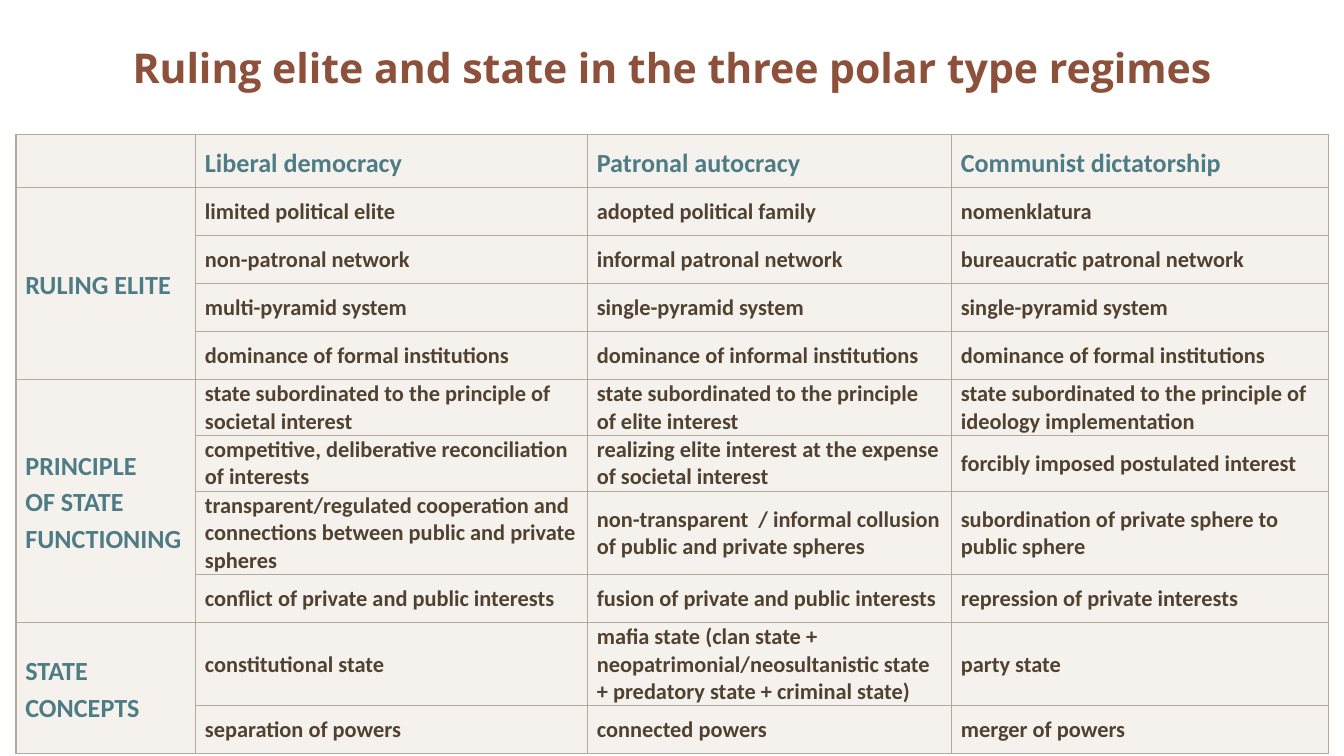
from lxml import etree
from pptx import Presentation
from pptx.dml.color import RGBColor
from pptx.enum.text import MSO_ANCHOR, PP_ALIGN
from pptx.oxml.ns import qn
from pptx.util import Pt

MIDDLE = MSO_ANCHOR.MIDDLE
CENTER = PP_ALIGN.CENTER
BORDER = "B3A99D"
FILL = "EFEAE4"
TITLE = {"name": "Open Sans", "size": Pt(22), "bold": True, "color": "8D503B"}
HEADING = {"name": "Calibri", "size": Pt(14), "bold": True, "color": "4D7C85"}
BODY = {"name": "Calibri", "size": Pt(12), "bold": True, "color": "504131"}


def format_font(font, values):
    for name, value in values.items():
        if name == "color":
            font.color.rgb = RGBColor.from_string(value)
        else:
            setattr(font, name, value)


def add_border(cell, side, width):
    line = etree.SubElement(cell._tc.get_or_add_tcPr(), qn(f"a:ln{side}"), w=str(Pt(width)))
    fill = etree.SubElement(line, qn("a:solidFill"))
    etree.SubElement(fill, qn("a:srgbClr"), val=BORDER)


presentation = Presentation()
presentation.slide_width = Pt(720)
presentation.slide_height = Pt(405)
slide = presentation.slides.add_slide(presentation.slide_layouts[5])

# Title
title = slide.shapes.title
title.left, title.top, title.width, title.height = Pt(8.6), Pt(0), Pt(703), Pt(72)
title.text_frame.text = "Ruling elite and state in the three polar type regimes"
title.text_frame.word_wrap = True
title.text_frame.vertical_anchor = MIDDLE
title_paragraph = title.text_frame.paragraphs[0]
title_paragraph.alignment = CENTER
format_font(title_paragraph.font, TITLE)

# Table contents: row height, row label, one text per regime
rows = [
    (28.4, "", "Liberal democracy", "Patronal autocracy", "Communist dictatorship"),
    (25.7, "RULING ELITE", "limited political elite", "adopted political family", "nomenklatura"),
    (25.7, "", "non-patronal network", "informal patronal network", "bureaucratic patronal network"),
    (25.7, "", "multi-pyramid system", "single-pyramid system", "single-pyramid system"),
    (25.7, "", "dominance of formal institutions", "dominance of informal institutions",
     "dominance of formal institutions"),
    (29.6, "PRINCIPLE\nOF STATE FUNCTIONING",
     "state subordinated to the principle of societal interest",
     "state subordinated to the principle of elite interest",
     "state subordinated to the principle of ideology implementation"),
    (29.6, "", "competitive, deliberative reconciliation of interests",
     "realizing elite interest at the expense of societal interest",
     "forcibly imposed postulated interest"),
    (44.4, "", "transparent/regulated cooperation and connections between public and private spheres",
     "non-transparent  / informal collusion of public and private spheres",
     "subordination of private sphere to public sphere"),
    (25.7, "", "conflict of private and public interests", "fusion of private and public interests",
     "repression of private interests"),
    (44.4, "STATE CONCEPTS", "constitutional state",
     "mafia state (clan state + neopatrimonial/neosultanistic state + predatory state + criminal state)",
     "party state"),
    (25.7, "", "separation of powers", "connected powers", "merger of powers"),
]
column_widths = [96.2, 210, 195, 202]
label_spans = [(1, 4), (5, 8), (9, 10)]
last_row, last_column = len(rows) - 1, len(column_widths) - 1

# Table grid
frame = slide.shapes.add_table(
    len(rows), len(column_widths), Pt(8.6), Pt(72),
    Pt(sum(column_widths)), Pt(sum(row[0] for row in rows)))
table = frame.table
table.first_row = False
table.horz_banding = False
for column, width in zip(table.columns, column_widths):
    column.width = Pt(width)

# Cells
for row_index, (height, *texts) in enumerate(rows):
    table.rows[row_index].height = Pt(height)
    for column_index, text in enumerate(texts):
        cell = table.cell(row_index, column_index)
        is_heading = row_index == 0 or column_index == 0
        cell.text_frame.text = text
        cell.vertical_anchor = MIDDLE
        cell.margin_left = Pt(5)
        cell.margin_right = Pt(5 if column_index else 0)
        cell.margin_top = Pt(0.7 if column_index else 0)
        cell.margin_bottom = Pt(0)
        for paragraph in cell.text_frame.paragraphs:
            if is_heading:
                paragraph.line_spacing = 1.15
            format_font(paragraph.font, HEADING if is_heading else BODY)
            for run in paragraph.runs:
                format_font(run.font, HEADING if is_heading else BODY)

        # Thick outer frame, thin inner lines
        outer_sides = {"L": column_index == 0, "R": column_index == last_column,
                       "T": row_index == 0, "B": row_index == last_row}
        for side, is_outer in outer_sides.items():
            add_border(cell, side, 1 if is_outer else 0.5)

        # Translucent fill
        cell.fill.solid()
        cell.fill.fore_color.rgb = RGBColor.from_string(FILL)
        fill_color = cell._tc.tcPr.find(qn("a:solidFill")).find(qn("a:srgbClr"))
        etree.SubElement(fill_color, qn("a:alpha"), val="60000")

# Row labels span their group
for first, last in label_spans:
    table.cell(first, 0).merge(table.cell(last, 0))

presentation.save("out.pptx")
